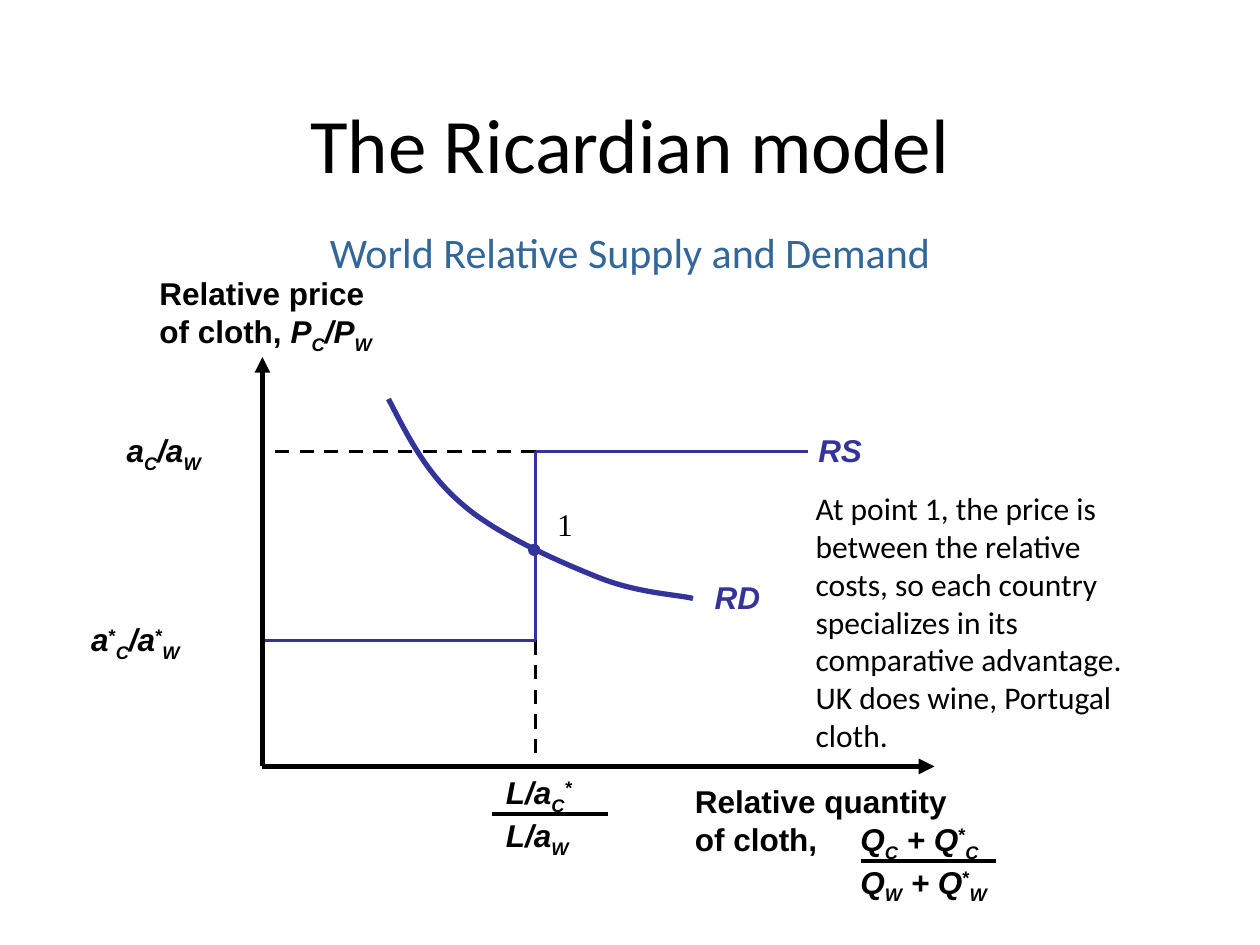
from lxml.etree import SubElement
from pptx import Presentation
from pptx.dml.color import RGBColor
from pptx.enum.dml import MSO_LINE
from pptx.enum.shapes import MSO_CONNECTOR, MSO_SHAPE
from pptx.enum.text import MSO_ANCHOR, PP_ALIGN
from pptx.oxml.ns import qn
from pptx.util import Pt

PX = 9525  # EMU per px, 96 px to the inch
BLACK = RGBColor(0x00, 0x00, 0x00)
INDIGO = RGBColor(0x33, 0x33, 0x99)
STEEL = RGBColor(0x33, 0x66, 0x99)
BASELINES = {"_": "-25000", "^": "30000"}

# Plot lengths, measured from its top left corner
QUANTITY = 208
HIGH_PRICE, LOW_PRICE = 72, 216
RD_CURVE = [(96, 32), (111, 61), (125, 89), (152, 112), (178, 135),
            (226, 156), (256, 168), (286, 180), (316, 181), (328, 184)]


def add_run(p, mark, font, size, color, bold):
    """Leading marks: _ italic subscript, ^ superscript, ~ italic."""
    body = mark.lstrip("_^~")
    marks = mark[:len(mark) - len(body)]
    r = p.add_run()
    r.text = body
    r.font.name, r.font.size, r.font.bold = font, Pt(size), bold
    r.font.italic = "_" in marks or "~" in marks
    r.font.color.rgb = color
    for key, offset in BASELINES.items():
        if key in marks:
            r.font._element.set("baseline", offset)


def text(slide, box, *lines, font="Arial", size=18, color=BLACK, bold=True,
         align=PP_ALIGN.LEFT, anchor=MSO_ANCHOR.TOP, wrap=True, tab=None):
    """Each line is a list of marked runs."""
    sp = slide.shapes.add_textbox(*(v * PX for v in box))
    tf = sp.text_frame
    tf.word_wrap, tf.vertical_anchor = wrap, anchor
    for i, line in enumerate(lines):
        p = tf.add_paragraph() if i else tf.paragraphs[0]
        p.alignment = align
        if tab:
            stops = SubElement(p._p.get_or_add_pPr(), qn("a:tabLst"))
            SubElement(stops, qn("a:tab"), pos=str(tab * PX), algn="l")
        for mark in line:
            add_run(p, mark, font, size, color, bold)


def line(slide, start, end, color=BLACK, width=2, dash=False, arrow=False):
    cxn = slide.shapes.add_connector(
        MSO_CONNECTOR.STRAIGHT, *(v * PX for v in (*start, *end)))
    cxn.line.color.rgb, cxn.line.width = color, Pt(width)
    if dash:
        cxn.line.dash_style = MSO_LINE.DASH
    if arrow:
        SubElement(cxn.line._get_or_add_ln(), qn("a:tailEnd"), type="triangle")
    SubElement(cxn._element.spPr, qn("a:effectLst"))


def curve(slide, points, color, width):
    """Bezier curve through a start point and triples of control points."""
    builder = slide.shapes.build_freeform(*points[0], scale=PX)
    builder.add_line_segments(points[1:], close=False)
    sp = builder.convert_to_shape()
    sp.shadow.inherit = False
    sp.fill.background()
    sp.line.color.rgb, sp.line.width = color, Pt(width)
    outline = next(sp._element.iter(qn("a:path")))
    segments = outline.findall(qn("a:lnTo"))
    for i in range(0, len(segments), 3):
        bezier = SubElement(outline, qn("a:cubicBezTo"))
        for segment in segments[i:i + 3]:
            bezier.append(segment[0])
            outline.remove(segment)


def header(slide, x, y, w):
    text(slide, (x, y, w, 120), ["The Ricardian model"], font="Calibri",
         size=44, bold=False, align=PP_ALIGN.CENTER, anchor=MSO_ANCHOR.BOTTOM)
    text(slide, (x, y + 139, w, 48), ["World Relative Supply and Demand"],
         font="Calibri", size=24, color=STEEL, bold=False,
         align=PP_ALIGN.CENTER)


def axes(slide, x, y, w, h):
    line(slide, (x, y + h), (x, y), width=3, arrow=True)
    line(slide, (x, y + h), (x + w, y + h), width=3, arrow=True)
    text(slide, (x - 88, y - 68, 186, 68), ["Relative price"],
         ["of cloth, ", "~P", "_C", "~/P", "_W"], wrap=False)
    text(slide, (x + 320, y + h + 7, 250, 97), ["Relative quantity"],
         ["of cloth,\t", "~Q", "_C", "~ + Q", "^*", "_C"],
         ["\t", "~Q", "_W", "~ + Q", "^*", "_W"], tab=126)
    line(slide, (x + 456, y + h + 72), (x + 559, y + h + 72), width=2.25)


def guides(slide, x, y, h):
    """Dashed guides with the price and quantity labels they lead to."""
    step = x + QUANTITY
    line(slide, (step, y + HIGH_PRICE), (x, y + HIGH_PRICE), dash=True)
    line(slide, (step, y + LOW_PRICE), (step, y + h), dash=True)
    text(slide, (x - 113, y + HIGH_PRICE - 20, 104, 38),
         ["~a", "_C", "~/a", "_W"])
    text(slide, (x - 140, y + LOW_PRICE - 20, 128, 38),
         ["~a", "^*", "_C", "~/a", "^*", "_W"])
    text(slide, (step - 32, y + h, 113, 68),
         ["~L/a", "_C", "^~*"], ["~L/a", "_W"])
    line(slide, (step - 33, y + h + 36), (step + 55, y + h + 36), width=2.25)


def supply_and_demand(slide, x, y):
    supply = [(0, LOW_PRICE), (QUANTITY, LOW_PRICE),
              (QUANTITY, HIGH_PRICE), (416, HIGH_PRICE)]
    supply = [(x + dx, y + dy) for dx, dy in supply]
    for start, end in zip(supply, supply[1:]):
        line(slide, start, end, INDIGO)
    curve(slide, [(x + dx, y + dy) for dx, dy in RD_CURVE], INDIGO, 3)

    dot = slide.shapes.add_shape(
        MSO_SHAPE.OVAL, (x + 203) * PX, (y + 143) * PX, 8 * PX, 8 * PX)
    dot.shadow.inherit = False
    dot.fill.solid()
    dot.fill.fore_color.rgb = dot.line.color.rgb = INDIGO
    dot.line.width = Pt(1)

    for name, dx, dy in (("~RS", 414, 52), ("~RD", 335, 164)):
        text(slide, (x + dx, y + dy, 54, 38), [name], color=INDIGO, wrap=False)
    text(slide, (x + 215, y + 108, 32, 38), ["1"], font="Times New Roman",
         bold=False, wrap=False)


def note(slide, *box):
    text(slide, box, [
        "At point 1, the price is between the relative costs, so each country "
        "specializes in its comparative advantage. UK does wine, Portugal "
        "cloth."], font="Calibri", bold=False)


def main():
    prs = Presentation()
    prs.slide_width, prs.slide_height = 960 * PX, 720 * PX
    slide = prs.slides.add_slide(prs.slide_layouts[6])
    x, y, w, h = 200, 272, 512, 312
    header(slide, 48, 29, 864)
    guides(slide, x, y, h)
    supply_and_demand(slide, x, y)
    axes(slide, x, y, w, h)
    note(slide, 612, 368, 253, 213)
    prs.save("out.pptx")


if __name__ == "__main__":
    main()
